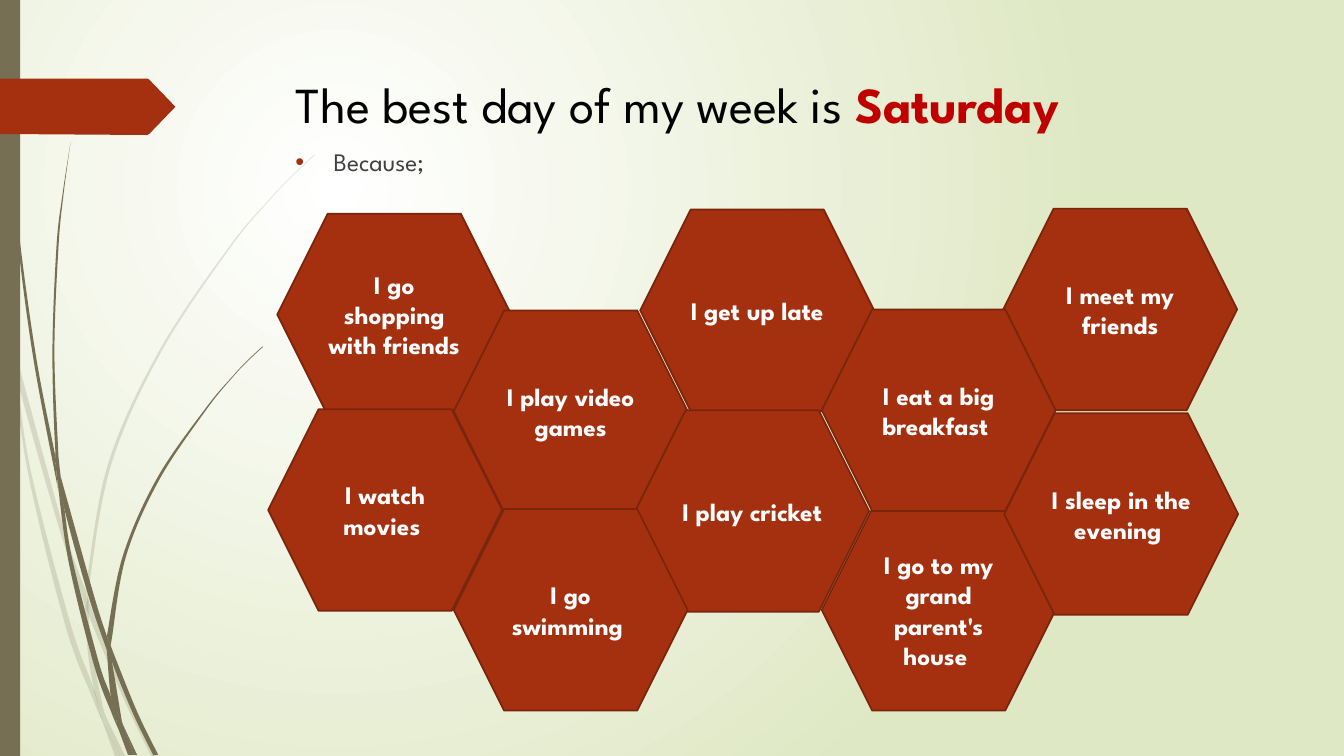
import pptx
import pptx.util
import pptx.dml.color
import pptx.enum.shapes
import pptx.enum.text
import pptx.oxml.ns
import lxml.etree

Inches = pptx.util.Inches
Pt = pptx.util.Pt
RGBColor = pptx.dml.color.RGBColor
SHAPE = pptx.enum.shapes.MSO_SHAPE
ALIGN = pptx.enum.text.PP_ALIGN
ANCHOR = pptx.enum.text.MSO_ANCHOR
qn = pptx.oxml.ns.qn

FONT = "League Spartan"
WHITE = RGBColor(0xFF, 0xFF, 0xFF)
BLACK = RGBColor(0, 0, 0)
PALE_GREEN = RGBColor(0xDF, 0xE8, 0xC4)
OLIVE = RGBColor(0x76, 0x6F, 0x54)
RUST = RGBColor(0xA5, 0x30, 0x10)
DARK_RUST = RGBColor(0x7A, 0x24, 0x0C)
RED = RGBColor(0xC0, 0, 0)
GREY = RGBColor(0x40, 0x40, 0x40)

HEADLINE = [
    ("The best day of my week is ", BLACK, {"size": Pt(36), "name": FONT, "bold": False}),
    ("Saturday", RED, {"size": Pt(36), "name": FONT, "bold": True}),
]
LEAD_IN = "Because;"
LEAD_IN_FORMAT = {"size": Pt(18), "name": FONT, "bold": False}
REASON_FORMAT = {"size": Pt(18), "name": FONT, "bold": True}
REASON_SIZE = (2.32, 2)
REASONS = [
    ("I go shopping with friends", 2.75, 2.12),
    ("I play video games", 4.5, 3.08),
    ("I get up late", 6.35, 2.08),
    ("I watch movies ", 2.66, 4.06),
    ("I play cricket ", 6.3, 4.07),
    ("I go to my grand parent's house ", 8.15, 5.05),
    ("I sleep in the evening ", 9.96, 4.1),
    ("I meet my friends", 9.95, 2.07),
    ("I eat a big breakfast ", 8.15, 3.07),
    ("I go swimming ", 4.5, 5.05),
]
PALE_BLADES = [
    ([(0.11, 3.5), (0.09, 3.22), (0, 2.82)], [(0, 2.99), (0.1, 3.44)]),
    ([(0.14, 3.45), (0.17, 3.76), (0.58, 5.22), (0.84, 5.99)], [(0.85, 5.86), (0.62, 5.2), (0.14, 3.45)]),
    ([(0.88, 5.96), (0.88, 6.1), (1.23, 6.94), (1.5, 7.5)], [(1.55, 7.5), (1.27, 6.92), (0.92, 6.07)]),
    ([(1.19, 7.5), (1.24, 7.5)], [(1.05, 7.11)]),
    ([(0.11, 3.5), (0.28, 4.7), (0.65, 6.21), (0.92, 6.93), (1.01, 7.14)],
     [(0.99, 7.07), (0.93, 6.83), (0.7, 6.19), (0.31, 4.69), (0.17, 3.76)]),
    ([(0.84, 5.99), (0.87, 6.46), (0.93, 6.83), (0.96, 6.92), (1.05, 7.11)],
     [(1.03, 7.06), (0.91, 6.46), (0.88, 6.1), (0.88, 6.08)]),
    ([(3.12, 1.53), (2.89, 1.75), (2.68, 1.97), (2.28, 2.44), (1.58, 3.48), (1.07, 4.61), (0.85, 5.84)],
     [(0.88, 5.96), (0.88, 5.84), (1.1, 4.62), (1.6, 3.49), (2.29, 2.45), (2.68, 1.98),
      (2.9, 1.75), (3.12, 1.54)]),
    ([(1.01, 7.14), (1.14, 7.5)], [(1.19, 7.5)]),
    ([(0.85, 5.86), (0.84, 5.99), (0.88, 6.08)], [(0.88, 6.1), (0.88, 5.96)]),
    ([(0.93, 6.83), (0.99, 7.07), (1.01, 7.14), (1.19, 7.5)], [(1.05, 7.11), (0.96, 6.92)]),
]
DARK_BLADES = [
    ([(0.03, 0), (0.07, 1.1), (0.17, 2.33), (0.33, 3.55), (0.56, 4.77), (0.57, 4.81)],
     [(0.55, 4.57), (0.55, 4.53), (0.36, 3.55), (0.19, 2.32), (0.08, 1.09), (0.05, 0.48), (0.04, 0)]),
    ([(0.6, 4.72), (0.64, 5.05), (0.88, 5.92), (1.06, 6.45)], [(1.06, 6.31), (0.93, 5.9), (0.6, 4.72)]),
    ([(1.1, 6.41), (1.11, 6.56), (1.32, 7.08), (1.52, 7.49)], [(1.57, 7.49), (1.36, 7.06), (1.13, 6.49)]),
    ([(0.57, 4.77), (0.68, 5.57), (0.93, 6.59), (1.11, 7.08), (1.17, 7.22)],
     [(1.16, 7.17), (1.1, 6.91), (0.98, 6.57), (0.72, 5.56), (0.64, 5.05)]),
    ([(0.7, 1.41), (0.62, 1.93), (0.56, 2.45), (0.52, 3.49), (0.55, 4.49), (0.6, 4.72)],
     [(0.58, 4.53), (0.54, 3.49), (0.58, 2.45), (0.63, 1.93), (0.7, 1.41)]),
    ([(1.33, 7.49), (1.36, 7.49)], [(1.22, 7.19)]),
    ([(0.55, 4.49), (0.55, 4.53), (0.57, 4.77), (0.64, 5.05)], [(0.6, 4.72)]),
    ([(2.6, 3.44), (2.45, 3.58), (2.31, 3.73), (2.04, 4.05), (1.56, 4.74), (1.22, 5.51), (1.06, 6.31)],
     [(1.1, 6.41), (1.11, 6.33), (1.25, 5.52), (1.58, 4.76), (2.05, 4.06), (2.31, 3.74),
      (2.45, 3.59), (2.61, 3.44)]),
    ([(1.17, 7.22), (1.27, 7.49)], [(1.31, 7.49)]),
    ([(1.06, 6.45), (1.1, 6.91), (1.16, 7.06), (1.22, 7.19)], [(1.21, 7.16), (1.11, 6.56), (1.09, 6.51)]),
    ([(1.06, 6.31), (1.06, 6.45), (1.09, 6.51)], [(1.11, 6.56), (1.1, 6.41)]),
    ([(1.1, 6.91), (1.16, 7.17), (1.17, 7.22), (1.3, 7.49)], [(1.33, 7.49), (1.22, 7.19), (1.16, 7.06)]),
]
TAG = [(0, 0.78), (1.46, 0.78), (1.48, 0.79), (1.74, 1.06), (1.48, 1.33), (1.46, 1.34), (0, 1.33)]


def apply(target, values):
    for key, value in values.items():
        setattr(target, key, value)


def box(left, top, width, height):
    return dict(zip(("left", "top", "width", "height"), map(Inches, (left, top, width, height))))


def paint(part, color):
    part.shadow.inherit = False
    part.fill.solid()
    part.fill.fore_color.rgb = color
    part.line.fill.background()


def add_outline(shapes, points, color):
    corners = [(Inches(x), Inches(y)) for x, y in points]
    builder = shapes.build_freeform(*corners[0])
    builder.add_line_segments(corners[1:], close=True)
    outline = builder.convert_to_shape()
    paint(outline, color)
    return outline


def bend(segment, before, start, end, after, origin):
    segment.tag = qn("a:cubicBezTo")
    for position in (1, 0):
        handle = [(s + (e - b) / 6, e - (a - s) / 6)[position]
                  for b, s, e, a in zip(before, start, end, after)]
        x, y = (str(round(Inches(value) - offset)) for value, offset in zip(handle, origin))
        point = lxml.etree.Element(qn("a:pt"), x=x, y=y)
        segment.insert(0, point)


def add_blade(shapes, down, up, opacity):
    blade = add_outline(shapes, down + up, OLIVE)
    segments = list(blade._element.iter(qn("a:lnTo")))
    origin = (blade.left, blade.top)
    for edge, first in ((down, 0), (up, len(down))):
        padded = [edge[0], *edge, edge[-1]]
        for index, anchors in enumerate(zip(padded, padded[1:], padded[2:], padded[3:])):
            bend(segments[first + index], *anchors, origin)
    if opacity < 100:
        color = blade._element.spPr.find(qn("a:solidFill")).find(qn("a:srgbClr"))
        lxml.etree.SubElement(color, qn("a:alpha"), val=str(opacity * 1000))


def add_background(slide):
    fill = slide.background.fill
    fill.gradient()
    for stop, color, position in zip(fill.gradient_stops, (WHITE, PALE_GREEN), (0, 1)):
        stop.color.rgb = color
        stop.position = position
    gradient = slide.background._cSld.find(".//" + qn("a:gradFill"))
    gradient.remove(gradient.find(qn("a:lin")))
    circle = lxml.etree.SubElement(gradient, qn("a:path"), path="circle")
    lxml.etree.SubElement(circle, qn("a:fillToRect"), l="50000", t="50000", r="100000", b="100000")


def add_run(paragraph, text, color, values):
    run = paragraph.add_run()
    run.text = text
    apply(run.font, values)
    run.font.color.rgb = color


def add_wording(slide):
    headline, because = slide.placeholders
    frame_format = {"word_wrap": True, "auto_size": pptx.enum.text.MSO_AUTO_SIZE.NONE,
                    "vertical_anchor": ANCHOR.TOP}
    for part, place in ((headline, box(2.83, 0.68, 9.75, 1.4)), (because, box(2.83, 1.4, 9.75, 5.77))):
        slide.shapes._spTree.append(part._element)
        apply(part, place)
        apply(part.text_frame, frame_format)
        apply(part.text_frame.paragraphs[0], {"alignment": ALIGN.LEFT, "space_before": Pt(0)})
    for text, color, values in HEADLINE:
        add_run(headline.text_frame.paragraphs[0], text, color, values)
    lead_in = because.text_frame.paragraphs[0]
    props = lead_in._p.get_or_add_pPr()
    props.set("marL", str(Inches(0.38)))
    props.set("indent", str(-Inches(0.38)))
    bullet_color = lxml.etree.SubElement(props, qn("a:buClr"))
    lxml.etree.SubElement(bullet_color, qn("a:srgbClr"), val=str(RUST))
    lxml.etree.SubElement(props, qn("a:buFont"), typeface="Arial")
    lxml.etree.SubElement(props, qn("a:buChar"), char="•")
    add_run(lead_in, LEAD_IN, GREY, LEAD_IN_FORMAT)


def add_reason(shapes, text, left, top):
    reason = shapes.add_shape(SHAPE.HEXAGON, *box(left, top, *REASON_SIZE).values())
    paint(reason, RUST)
    reason.line.color.rgb = DARK_RUST
    reason.line.width = Pt(1.25)
    apply(reason.text_frame, {"word_wrap": True, "vertical_anchor": ANCHOR.MIDDLE})
    paragraph = reason.text_frame.paragraphs[0]
    paragraph.alignment = ALIGN.CENTER
    add_run(paragraph, text, WHITE, REASON_FORMAT)


def main():
    deck = pptx.Presentation()
    apply(deck, {"slide_width": Inches(13.33), "slide_height": Inches(7.5)})
    slide = deck.slides.add_slide(deck.slide_layouts[1])
    shapes = slide.shapes
    add_background(slide)
    for blades, opacity in ((PALE_BLADES, 20), (DARK_BLADES, 100)):
        for down, up in blades:
            add_blade(shapes, down, up, opacity)
    paint(shapes.add_shape(SHAPE.RECTANGLE, *box(0, 0, 0.2, 7.5).values()), OLIVE)
    add_outline(shapes, TAG, RUST)
    add_wording(slide)
    for text, left, top in REASONS:
        add_reason(shapes, text, left, top)
    deck.save("out.pptx")


if __name__ == "__main__":
    main()
